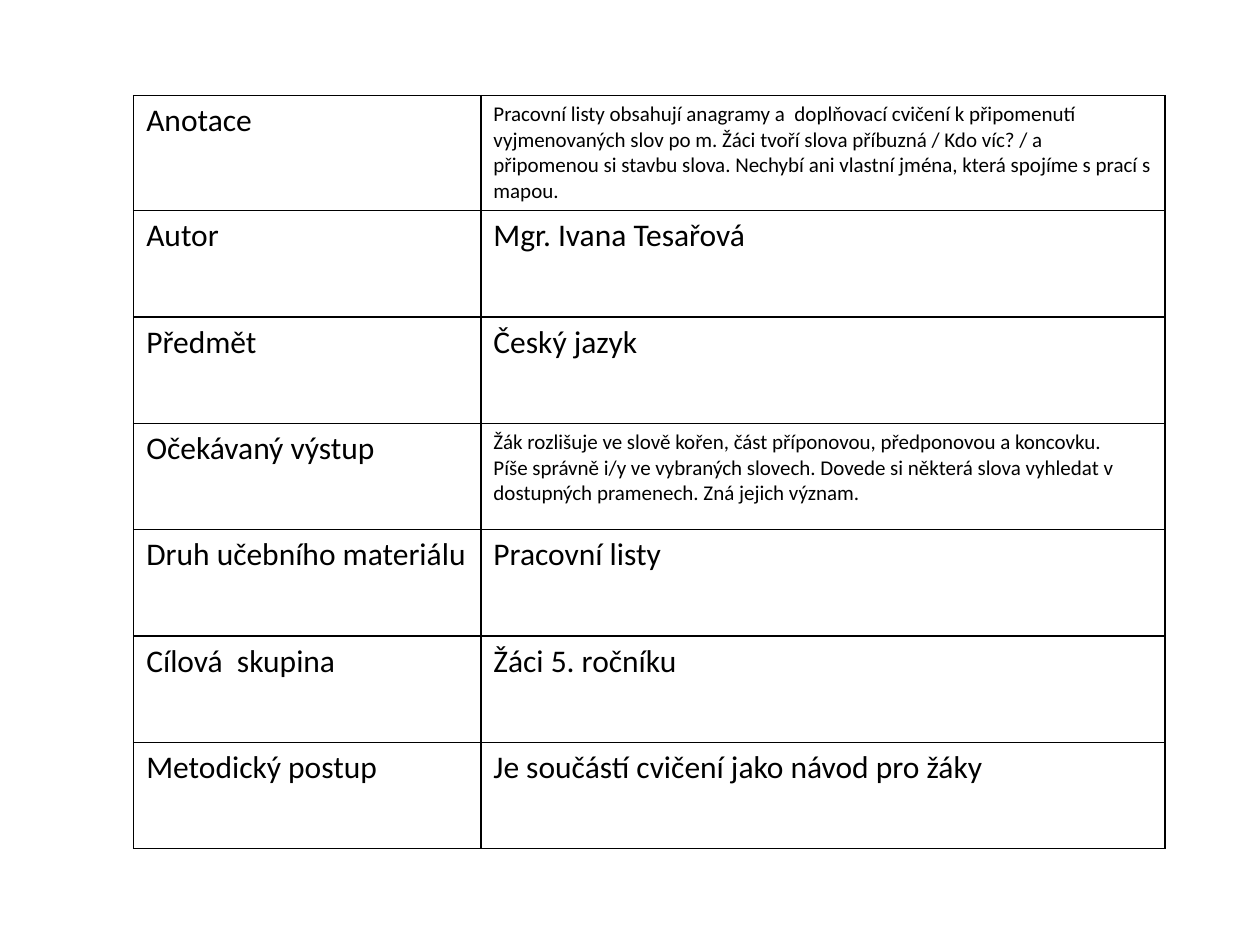
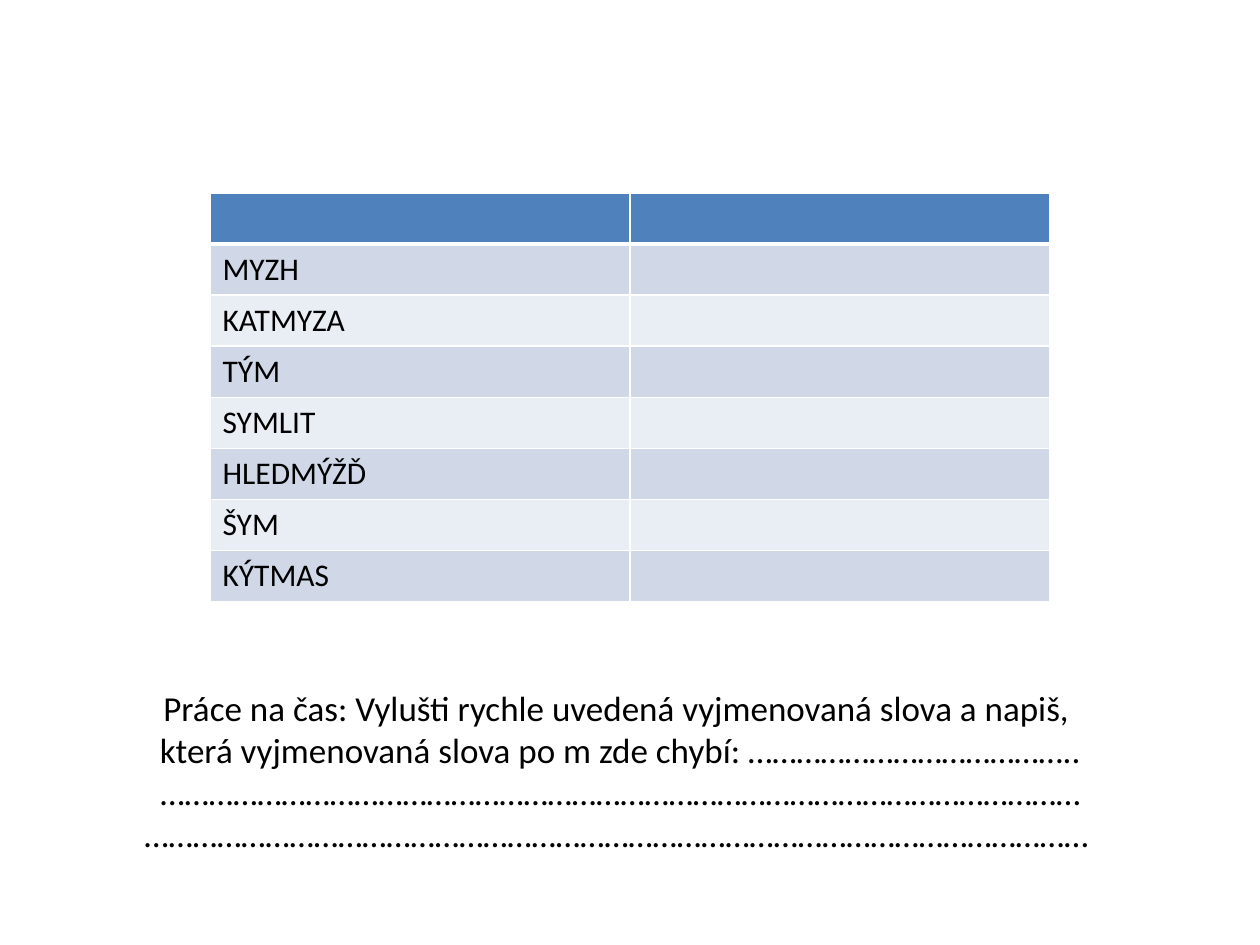
import pptx
import pptx.dml.color
import pptx.enum.text
import pptx.oxml
import pptx.oxml.ns
import pptx.util

Pt = pptx.util.Pt
Color = pptx.dml.color.RGBColor
BLACK = Color(0, 0, 0)
WHITE = Color(255, 255, 255)
BLUE = Color(0x4F, 0x81, 0xBD)
DARK = Color(0xD0, 0xD8, 0xE8)
LIGHT = Color(0xE9, 0xED, 0xF4)
FONT = "Calibri"

FACTS = [
    ("Anotace", 12, [
        "Pracovní listy obsahují anagramy a  doplňovací cvičení k připomenutí "
        "vyjmenovaných slov po m. Žáci tvoří slova příbuzná / Kdo víc? / a "
        "připomenou si stavbu slova. Nechybí ani vlastní jména, která spojíme s prací s",
        "mapou."]),
    ("Autor", 18, ["Mgr. Ivana Tesařová"]),
    ("Předmět", 18, ["Český jazyk"]),
    ("Očekávaný výstup", 12, [
        "Žák rozlišuje ve slově kořen, část příponovou, předponovou a koncovku.",
        "Píše správně i/y ve vybraných slovech. Dovede si některá slova vyhledat v",
        "dostupných pramenech. Zná jejich význam."]),
    ("Druh učebního materiálu", 18, ["Pracovní listy"]),
    ("Cílová  skupina", 18, ["Žáci 5. ročníku"]),
    ("Metodický postup", 18, ["Je součástí cvičení jako návod pro žáky"]),
]
WORDS = ["MYZH", "KATMYZA", "TÝM", "SYMLIT", "HLEDMÝŽĎ", "ŠYM", "KÝTMAS"]
TASK = [
    "Práce na čas: Vylušti rychle uvedená vyjmenovaná slova a napiš, ",
    "která vyjmenovaná slova po m zde chybí: …………………………………..",
    "……………………………………………………………………………………………………",
    "……………………………………………………………………………………………………… ",
]


def write(frame, lines, size, align=None):
    for i, line in enumerate(lines):
        para = frame.add_paragraph() if i else frame.paragraphs[0]
        para.alignment = align
        run = para.add_run()
        run.text = line
        run.font.name = FONT
        run.font.size = Pt(size)
        run.font.color.rgb = BLACK


def edge(cell, color, top=1, bottom=1):
    props = cell._tc.get_or_add_tcPr()
    space = pptx.oxml.ns.nsdecls("a")
    sides = {"L": 1, "R": 1, "T": top, "B": bottom}
    for i, (side, width) in enumerate(sides.items()):
        props.insert(i, pptx.oxml.parse_xml(
            f'<a:ln{side} {space} w="{Pt(width)}"><a:solidFill>'
            f'<a:srgbClr val="{color}"/></a:solidFill></a:ln{side}>'))


def add_grid(slide, left, top, widths, height, count):
    frame = slide.shapes.add_table(
        count, len(widths), Pt(left), Pt(top), Pt(sum(widths)), Pt(height * count))
    table = frame.table
    table.first_row = False
    table.horz_banding = False
    for column, width in zip(table.columns, widths):
        column.width = Pt(width)
    for row in table.rows:
        row.height = Pt(height)
    return table


def add_facts(slide):
    table = add_grid(slide, 76.4, 54.6, (198.4, 390.8), 60.8, len(FACTS))
    for i, (label, size, lines) in enumerate(FACTS):
        write(table.cell(i, 0).text_frame, [label], 18)
        write(table.cell(i, 1).text_frame, lines, size)
    for cell in table.iter_cells():
        cell.fill.background()
        edge(cell, BLACK)


def add_words(slide):
    table = add_grid(slide, 120, 110.2, (240, 240), 29.2, len(WORDS) + 1)
    for i, row in enumerate(table.rows):
        fill = BLUE if i == 0 else DARK if i % 2 else LIGHT
        for cell in row.cells:
            cell.fill.solid()
            cell.fill.fore_color.rgb = fill
            edge(cell, WHITE, 3 if i == 1 else 1, 3 if i == 0 else 1)
    for i, word in enumerate(WORDS, 1):
        write(table.cell(i, 0).text_frame, [word], 18)


def add_task(slide):
    box = slide.shapes.add_textbox(Pt(65.5), Pt(388.8), Pt(578.2), Pt(104.4))
    frame = box.text_frame
    frame.word_wrap = True
    frame.auto_size = pptx.enum.text.MSO_AUTO_SIZE.SHAPE_TO_FIT_TEXT
    write(frame, TASK, 20, pptx.enum.text.PP_ALIGN.CENTER)


def main():
    deck = pptx.Presentation()
    deck.slide_width, deck.slide_height = Pt(720), Pt(540)
    blank = deck.slide_layouts[6]
    add_facts(deck.slides.add_slide(blank))
    quiz = deck.slides.add_slide(blank)
    add_words(quiz)
    add_task(quiz)
    deck.save("out.pptx")


if __name__ == "__main__":
    main()
